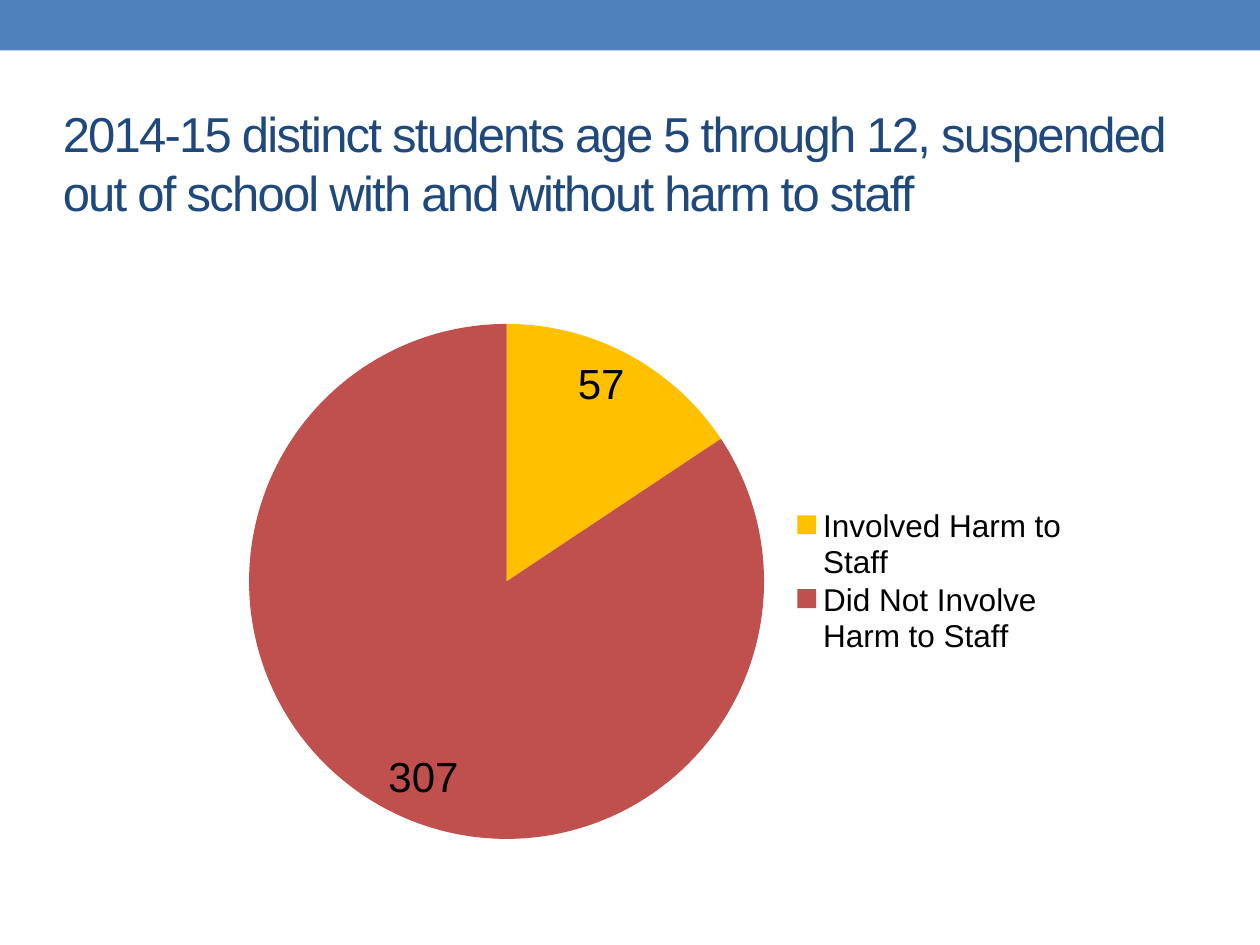
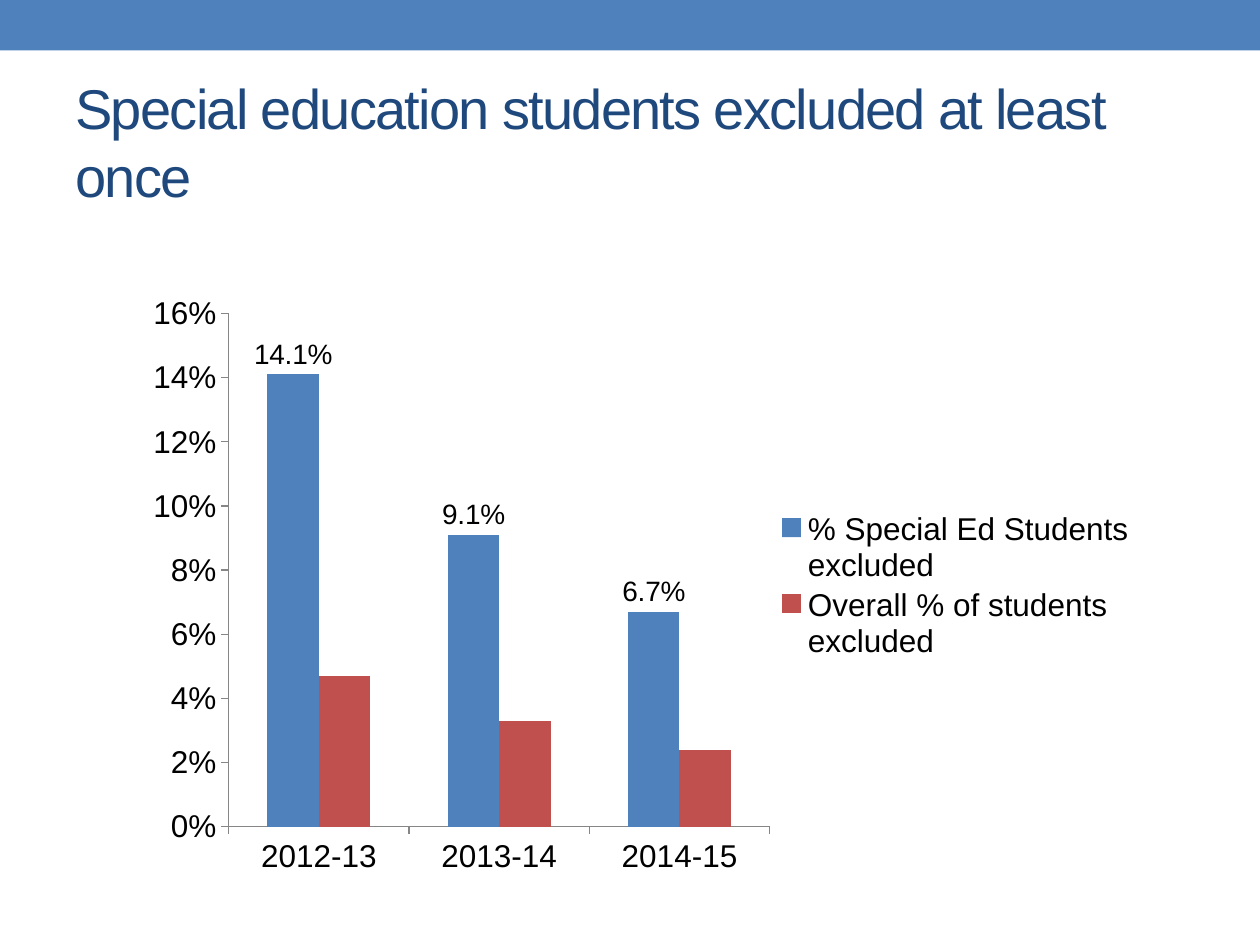
import pptx
import pptx.chart.data
import pptx.dml.color
import pptx.enum.chart
import pptx.enum.shapes
import pptx.enum.text
import pptx.oxml
import pptx.oxml.ns
import pptx.util

Inches = pptx.util.Inches
Pt = pptx.util.Pt
RGBColor = pptx.dml.color.RGBColor
ChartType = pptx.enum.chart.XL_CHART_TYPE
LabelPosition = pptx.enum.chart.XL_LABEL_POSITION
TickMark = pptx.enum.chart.XL_TICK_MARK
qn = pptx.oxml.ns.qn

BLUE = RGBColor(0x4F, 0x81, 0xBD)
NAVY = RGBColor(0x1F, 0x49, 0x7D)
RED = RGBColor(0xC0, 0x50, 0x4D)
GOLD = RGBColor(0xFF, 0xC0, 0x00)
GRAY = RGBColor(0x86, 0x86, 0x86)
BLACK = RGBColor(0, 0, 0)
FONT = "Arial"


def add_text(slide, text, box, size, color=NAVY, spacing=-1):
    """Add a vertically centred text box; spacing is in points."""
    shape = slide.shapes.add_textbox(*map(Inches, box))
    frame = shape.text_frame
    frame.word_wrap = True
    frame.vertical_anchor = pptx.enum.text.MSO_ANCHOR.MIDDLE
    run = frame.paragraphs[0].add_run()
    run.text = text
    run.font.name = FONT
    run.font.size = Pt(size)
    run.font.color.rgb = color
    run.font._element.set("spc", str(spacing * 100))


def place_chart_part(element, position, box, inner=False):
    """Fix a plot area or legend at box, given as fractions of the chart."""
    for old_layout in element.findall(qn("c:layout")):
        element.remove(old_layout)
    target = '<c:layoutTarget val="inner"/>' if inner else ""
    modes = '<c:xMode val="edge"/><c:yMode val="edge"/>'
    sizes = "".join(f'<c:{name} val="{value}"/>' for name, value in zip("xywh", box))
    layout = pptx.oxml.parse_xml(
        f'<c:layout {pptx.oxml.ns.nsdecls("c")}><c:manualLayout>'
        f"{target}{modes}{sizes}</c:manualLayout></c:layout>")
    element.insert(position, layout)


harm_data = pptx.chart.data.CategoryChartData()
harm_data.categories = ["Involved Harm to Staff", "Did Not Involve Harm to Staff"]
harm_data.add_series("Series 1", [57, 307])

exclusion_data = pptx.chart.data.CategoryChartData(number_format="0.0%")
exclusion_data.categories = ["2012-13", "2013-14", "2014-15"]
exclusion_data.add_series("% Special Ed Students excluded", [0.141, 0.091, 0.067])
exclusion_data.add_series("Overall % of students excluded", [0.047, 0.033, 0.024])

pages = [
    dict(title="2014-15 distinct students age 5 through 12, suspended "
               "out of school with and without harm to staff",
         title_box=(0.4, 0.75, 9.33, 1.08), title_size=28,
         chart_type=ChartType.PIE, data=harm_data, chart_box=(1.84, 1.89, 6.71, 5.45),
         plot_box=(0.02, 0.125, 0.61, 0.75), legend_box=(0.65, 0.39, 0.35, 0.22),
         label_size=24, label_format="General", label_position=LabelPosition.INSIDE_END),
    dict(title="Special education students excluded at least once",
         title_box=(0.5, 0.58, 9, 1.08), title_size=32,
         chart_type=ChartType.COLUMN_CLUSTERED, data=exclusion_data,
         chart_box=(1.06, 2.25, 8.04, 4.79),
         plot_box=(0.094, 0.05, 0.534, 0.85), legend_box=(0.65, 0.37, 0.35, 0.26),
         label_size=16, label_format="0.0%", label_position=LabelPosition.OUTSIDE_END),
]

presentation = pptx.Presentation()
presentation.slide_width = Inches(10)
presentation.slide_height = Inches(7.5)
charts = []

for page in pages:
    slide = presentation.slides.add_slide(presentation.slide_layouts[6])
    band = slide.shapes.add_shape(
        pptx.enum.shapes.MSO_SHAPE.RECTANGLE, 0, 0, Inches(10), Inches(0.4))
    band.shadow.inherit = False
    band.fill.solid()
    band.fill.fore_color.rgb = BLUE
    band.line.fill.background()
    add_text(slide, page["title"], page["title_box"], page["title_size"])

    chart = slide.shapes.add_chart(
        page["chart_type"], *map(Inches, page["chart_box"]), page["data"]).chart
    charts.append(chart)
    chart.has_title = False
    chart.font.name = FONT
    chart.font.size = Pt(10)
    chart.font.color.rgb = BLACK

    chart.has_legend = True
    chart.legend.position = pptx.enum.chart.XL_LEGEND_POSITION.RIGHT
    chart.legend.include_in_layout = False
    chart.legend.font.size = Pt(18)
    place_chart_part(chart.legend._element, 1, page["legend_box"])
    plot_area = chart._chartSpace.chart.plotArea
    place_chart_part(plot_area, 0, page["plot_box"], inner=True)

    labels = chart.plots[0].series[0].data_labels
    labels.show_value = True
    labels.position = page["label_position"]
    labels.number_format = page["label_format"]
    labels.number_format_is_linked = False
    labels.font.size = Pt(page["label_size"])

pie_chart, column_chart = charts

pie_chart.plots[0].vary_by_categories = True
for index, color in enumerate([GOLD, RED]):
    slice_fill = pie_chart.plots[0].series[0].points[index].format.fill
    slice_fill.solid()
    slice_fill.fore_color.rgb = color

columns = column_chart.plots[0]
columns.vary_by_categories = False
columns.gap_width = 150
columns.overlap = 0
for series, color in zip(columns.series, [BLUE, RED]):
    series.format.fill.solid()
    series.format.fill.fore_color.rgb = color

value_axis = column_chart.value_axis
value_axis.minimum_scale = 0
value_axis.maximum_scale = 0.16
value_axis.major_unit = 0.02
value_axis.tick_labels.number_format = "0%"
value_axis.tick_labels.number_format_is_linked = False
for axis in (column_chart.category_axis, value_axis):
    axis.has_major_gridlines = False
    axis.major_tick_mark = TickMark.OUTSIDE
    axis.minor_tick_mark = TickMark.NONE
    axis.tick_labels.font.size = Pt(18)
    axis.format.line.color.rgb = GRAY
    axis.format.line.width = Pt(0.75)

presentation.save("out.pptx")
